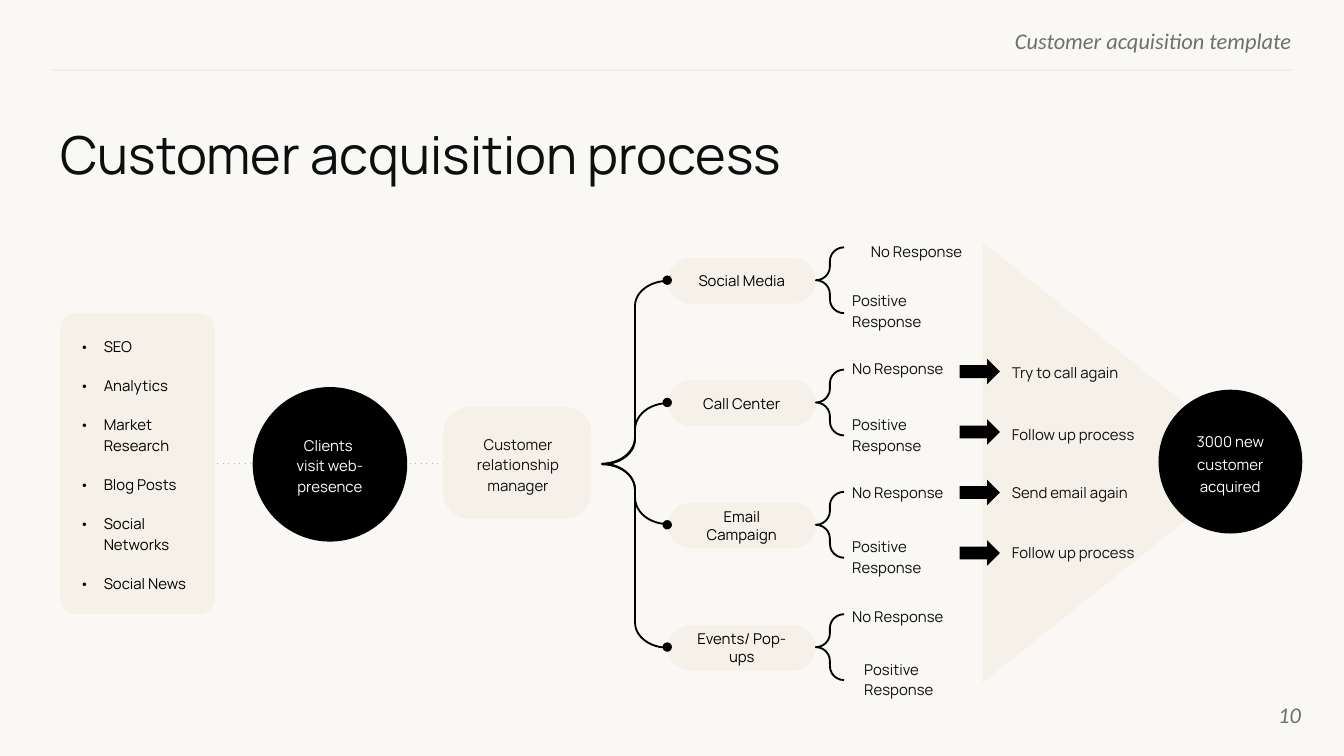
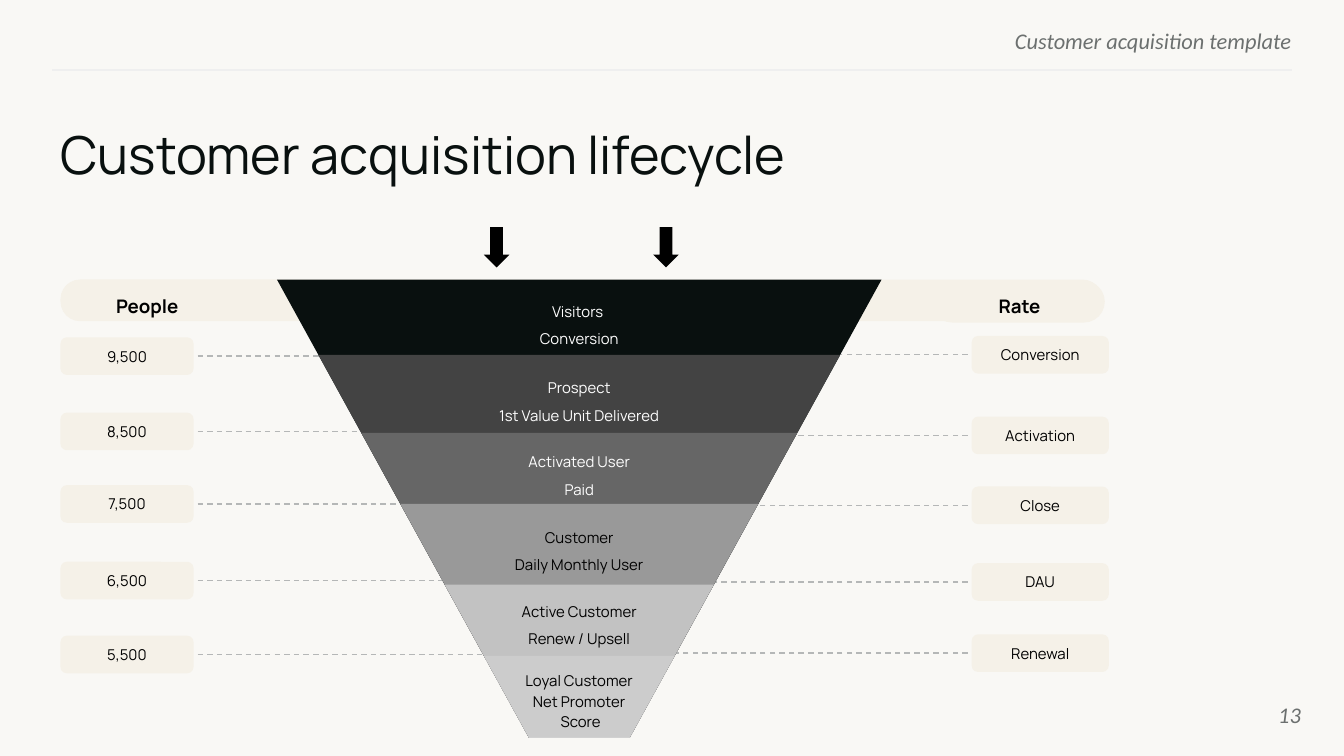
import lxml.etree
import pptx
import pptx.dml.color
import pptx.enum.shapes
import pptx.enum.text
import pptx.oxml.ns
import pptx.util

Inches = pptx.util.Inches
Pt = pptx.util.Pt
SHAPE = pptx.enum.shapes.MSO_SHAPE
ALIGN = pptx.enum.text.PP_ALIGN
ANCHOR = pptx.enum.text.MSO_ANCHOR

COLORS = {
    "paper": "F9F8F5", "sand": "F5F1E8", "rule": "EFEFEF", "dash": "B5B7B7",
    "muted": "6C706F", "ink": "09100F", "body": "0E0E0E", "black": "000000",
    "white": "FFFFFF", "grey1": "434343", "grey2": "666666", "grey3": "999999",
    "grey4": "C2C2C2", "grey5": "CCCCCC",
}


def text_style(color, size=8, name="Manrope", bold=False, italic=False, align=ALIGN.CENTER,
               spacing=None, after=None, inset=(0, 0), anchor=ANCHOR.MIDDLE, grow=False):
    fit = pptx.enum.text.MSO_AUTO_SIZE
    side, end = map(Inches, inset)
    return {
        "color": color,
        "font": {"name": name, "size": Pt(size), "bold": bold, "italic": italic},
        "paragraph": {"alignment": align, "line_spacing": spacing, "space_after": after},
        "frame": {"word_wrap": True, "vertical_anchor": anchor,
                  "auto_size": fit.SHAPE_TO_FIT_TEXT if grow else fit.NONE,
                  "margin_left": side, "margin_right": side,
                  "margin_top": end, "margin_bottom": end},
    }


PAD = (0.1, 0.05)
STYLES = {
    "header": text_style("muted", 12, "Calibri", italic=True, align=ALIGN.RIGHT,
                         anchor=ANCHOR.TOP),
    "number": text_style("muted", 12, "Calibri", italic=True, align=ALIGN.RIGHT),
    "title": text_style("ink", 28, align=ALIGN.LEFT, after=Pt(10), anchor=ANCHOR.TOP),
    "list": text_style("black", align=ALIGN.LEFT, spacing=1.15, inset=PAD),
    "pill": text_style("black", inset=PAD),
    "label": text_style("body", align=ALIGN.LEFT, spacing=1.15, grow=True),
    "manager": text_style("body", spacing=1.15, grow=True),
    "clients": text_style("white", spacing=1.15),
    "result": text_style("white", spacing=1.28),
    "heading": text_style("black", 10, bold=True, spacing=1.45, inset=PAD),
}
for shade in ("white", "black"):
    STYLES["band " + shade] = text_style(shade, spacing=1.53, inset=(0.1, 0.1),
                                         anchor=ANCHOR.TOP, grow=True)
STYLES["band tight"] = text_style("black", spacing=1.15, inset=(0.1, 0.1),
                                  anchor=ANCHOR.TOP, grow=True)


def rgb(color):
    return pptx.dml.color.RGBColor.from_string(COLORS[color])


def set_all(target, values):
    for attribute, value in values.items():
        setattr(target, attribute, value)


def write(holder, lines, style):
    """Put one paragraph per line into the holder; a vertical tab breaks a line."""
    look = STYLES[style]
    frame = holder.text_frame
    set_all(frame, look["frame"])
    for index, line in enumerate(lines):
        paragraph = frame.add_paragraph() if index else frame.paragraphs[0]
        paragraph.text = line
        set_all(paragraph, look["paragraph"])
        for run in paragraph.runs:
            set_all(run.font, look["font"])
            run.font.color.rgb = rgb(look["color"])


def add_text(slide, box, lines, style):
    write(slide.shapes.add_textbox(*map(Inches, box)), lines, style)


def add_block(slide, kind, box, fill=None, outline=None, turn=0, adjust=(), lines=(), style="pill"):
    """Add a preset shape that covers box after it is turned."""
    left, top, width, height = box
    if turn in (90, 270):
        left, top = left + (width - height) / 2, top + (height - width) / 2
        width, height = height, width
    block = slide.shapes.add_shape(kind, *map(Inches, (left, top, width, height)))
    block.shadow.inherit = False
    block.rotation = turn
    for index, value in enumerate(adjust):
        block.adjustments[index] = value
    for part, color in ((block.fill, fill), (block.line.fill, outline)):
        if color:
            part.solid()
            part.fore_color.rgb = rgb(color)
        else:
            part.background()
    if outline:
        block.line.width = Pt(1)
    if lines:
        write(block, lines, style)
    return block


def add_line(slide, start, end, color, dash=None):
    line = slide.shapes.add_connector(
        pptx.enum.shapes.MSO_CONNECTOR.STRAIGHT, *map(Inches, start + end))
    line.line.color.rgb = rgb(color)
    line.line.width = Pt(0.75)
    qn = pptx.oxml.ns.qn
    properties = line._element.spPr
    if dash:
        lxml.etree.SubElement(properties.find(qn("a:ln")), qn("a:prstDash"), val=dash)
    lxml.etree.SubElement(properties, qn("a:effectLst"))


def add_page(deck, title, number):
    slide = deck.slides.add_slide(deck.slide_layouts[6])
    add_text(slide, (5.76, 0.2, 3.85, 0.18), ["Customer acquisition template"], "header")
    add_line(slide, (9.61, 0.52), (0.39, 0.52), "rule")
    add_text(slide, (0.45, 0.91, 9.23, 0.51), [title], "title")
    add_text(slide, (9.08, 5.1, 0.6, 0.43), [number], "number")
    return slide


# Process slide

BRANCH_PITCH = 0.91
# name, then the offset of each response from the pill's corner
BRANCHES = [
    ("Social Media", (1.51, -0.12), (1.37, 0.24)),
    ("Call Center", (1.37, -0.16), (1.37, 0.25)),
    ("Email Campaign", (1.37, -0.15), (1.37, 0.25)),
    ("Events/ Pop-ups", (1.37, -0.14), (1.46, 0.25)),
]
# step, then its distance below the top of the triangle
FOLLOW_UPS = [("Try to call again", 0.9), ("Follow up process", 1.36),
              ("Send email again", 1.79), ("Follow up process", 2.24)]


def channel_list(slide, box):
    channels = ["SEO", "Analytics", "Market Research", "Blog Posts",
                "Social Networks", "Social News"]
    card = add_block(slide, SHAPE.ROUNDED_RECTANGLE, box, "sand", adjust=[0.1],
                     lines=channels, style="list")
    qn = pptx.oxml.ns.qn
    paragraphs = card.text_frame.paragraphs
    for index, paragraph in enumerate(paragraphs):
        paragraph.space_before = Pt(10 if index else 0)
        properties = paragraph._p.get_or_add_pPr()
        properties.set("marL", str(Inches(0.19)))
        properties.set("indent", str(Inches(-0.18)))
        bullet_color = lxml.etree.SubElement(properties, qn("a:buClr"))
        lxml.etree.SubElement(bullet_color, qn("a:srgbClr"), val=COLORS["black"])
        lxml.etree.SubElement(properties, qn("a:buFont"), typeface="Manrope")
        lxml.etree.SubElement(properties, qn("a:buChar"), char="•")
    paragraphs[-1].space_after = Pt(10)


def manager_card(slide, box):
    left, top, width, height = box
    add_block(slide, SHAPE.ROUNDED_RECTANGLE, box, "sand", adjust=[0.23])
    add_text(slide, (left + 0.15, top + 0.2, 0.81, 0.44),
             ["Customer relationship manager"], "manager")


def branch(slide, box, name, no_offset, positive_offset):
    left, top, width, height = box
    add_block(slide, SHAPE.ROUNDED_RECTANGLE, box, "sand", adjust=[0.5], lines=[name])
    add_block(slide, SHAPE.LEFT_BRACE, (left + width, top - 0.08, 0.21, 0.49),
              outline="black", adjust=[0.49, 0.5])
    for response, (dx, dy), tall in (("No Response", no_offset, 0.13),
                                     ("Positive Response", positive_offset, 0.29)):
        add_text(slide, (left + dx, top + dy, 0.81, tall), [response], "label")
    add_block(slide, SHAPE.OVAL, (left - 0.04, top + 0.13, 0.07, 0.07), "black")


def branches(slide, left, top):
    for index, (name, no_offset, positive_offset) in enumerate(BRANCHES):
        branch(slide, (left, top + index * BRANCH_PITCH, 1.1, 0.34),
               name, no_offset, positive_offset)
    for brace_top, tall, curve in ((0.17, 2.73, 0.38), (1.08, 0.9, 0.4)):
        add_block(slide, SHAPE.LEFT_BRACE, (left - 0.49, top + brace_top, 0.49, tall),
                  outline="black", adjust=[curve, 0.5])


def follow_ups(slide, box):
    left, top, width, height = box
    add_block(slide, SHAPE.ISOSCELES_TRIANGLE, box, "sand", turn=90, adjust=[0.5])
    for index, (step, dy) in enumerate(FOLLOW_UPS):
        add_block(slide, SHAPE.DOWN_ARROW, (left - 0.17, top + 0.87 + index * 0.45, 0.3, 0.19),
                  "black", turn=270)
        add_text(slide, (left + 0.22, top + dy, 1, 0.13), [step], "label")


def process_slide(deck):
    slide = add_page(deck, "Customer acquisition process", "10")
    add_line(slide, (1.41, 3.45), (4.16, 3.45), "dash", "dot")
    channel_list(slide, (0.45, 2.33, 1.15, 2.24))
    add_block(slide, SHAPE.OVAL, (1.88, 2.88, 1.15, 1.15), "black",
              lines=["Clients \vvisit web-\vpresence"], style="clients")
    manager_card(slide, (3.3, 3.03, 1.1, 0.83))
    branches(slide, 4.97, 1.92)
    follow_ups(slide, (7.31, 1.8, 2.05, 3.28))
    add_block(slide, SHAPE.OVAL, (8.62, 2.9, 1.07, 1.07), "black",
              lines=["3000 new customer acquired"], style="result")


# Lifecycle slide

# label, top of its tag, where its leader line ends
PEOPLE = [("9,500", 2.51, 2.98), ("8,500", 3.07, 3.3), ("7,500", 3.61, 3.46),
          ("6,500", 4.18, 3.7), ("5,500", 4.73, 4.06)]
RATES = [("Conversion", 2.5, 5.66), ("Activation", 3.1, 5.41), ("Close", 3.62, 5.18),
         ("DAU", 4.19, 4.86), ("Renewal", 4.72, 4.6)]
# top, fill, lines, text top, text width, text height, style
STAGES = [
    (2.08, "ink", ["Visitors ", "Conversion"], 2.08, 3.28, 0.54, "band white"),
    (2.64, "grey1", ["Prospect", "1st Value Unit Delivered"], 2.65, 3.28, 0.54, "band white"),
    (3.22, "grey2", ["Activated User", "Paid"], 3.2, 1.51, 0.54, "band white"),
    (3.75, "grey3", ["Customer", "Daily Monthly User"], 3.76, 1.51, 0.54, "band black"),
    (4.35, "grey4", ["Active Customer", "Renew / Upsell"], 4.31, 1.28, 0.54, "band black"),
    (4.88, "grey5", ["Loyal Customer", "Net Promoter\v Score"], 4.88, 1.1, 0.65, "band tight"),
]


def tag_column(slide, left, width, line_start, tags):
    for label, top, line_end in tags:
        middle = top + 0.14
        add_line(slide, (line_start, middle), (line_end, middle), "dash", "dash")
        add_block(slide, SHAPE.ROUNDED_RECTANGLE, (left, top, width, 0.28), "sand",
                  adjust=[0.17], lines=[label])


def heading_bar(slide, box):
    left, top, width, height = box
    add_block(slide, SHAPE.ROUNDED_RECTANGLE, box, "sand", turn=90, adjust=[0.47])
    add_block(slide, SHAPE.ROUNDED_RECTANGLE, (left + 6.48, top + 0.01, 1.29, height),
              "sand", turn=90, adjust=[0.5])
    for heading, dx, wide in (("People", 0.3, 0.69), ("Rate", 6.76, 0.75)):
        add_text(slide, (left + dx, top + 0.05, wide, 0.22), [heading], "heading")


def funnel(slide, center, tip, slope):
    """Stack triangles that share one tip, and cut the tip off with a cover."""
    for top, fill, *_ in STAGES:
        tall = tip - top
        wide = tall * slope
        add_block(slide, SHAPE.ISOSCELES_TRIANGLE, (center - wide / 2, top, wide, tall),
                  fill, turn=180)
    add_block(slide, SHAPE.RECTANGLE, (center - 1.56, tip - 0.68, 3.12, 0.69), "paper")
    for dx in (-0.71, 0.55):
        add_block(slide, SHAPE.DOWN_ARROW, (center + dx, 1.69, 0.19, 0.3), "black")
    for _, _, lines, top, wide, tall, style in STAGES:
        add_text(slide, (center - wide / 2, top, wide, tall), lines, style)


def lifecycle_slide(deck):
    slide = add_page(deck, "Customer acquisition lifecycle", "13")
    tag_column(slide, 0.45, 0.99, 1.47, PEOPLE)
    tag_column(slide, 7.23, 1.02, 7.2, RATES)
    heading_bar(slide, (0.45, 2.08, 7.75, 0.31))
    funnel(slide, 4.31, 6.17, 1.1)


def main():
    deck = pptx.Presentation()
    deck.slide_width = Inches(10)
    deck.slide_height = deck.slide_width * 9 // 16
    background = deck.slide_master.background.fill
    background.solid()
    background.fore_color.rgb = rgb("paper")
    process_slide(deck)
    lifecycle_slide(deck)
    deck.save("out.pptx")


if __name__ == "__main__":
    main()
